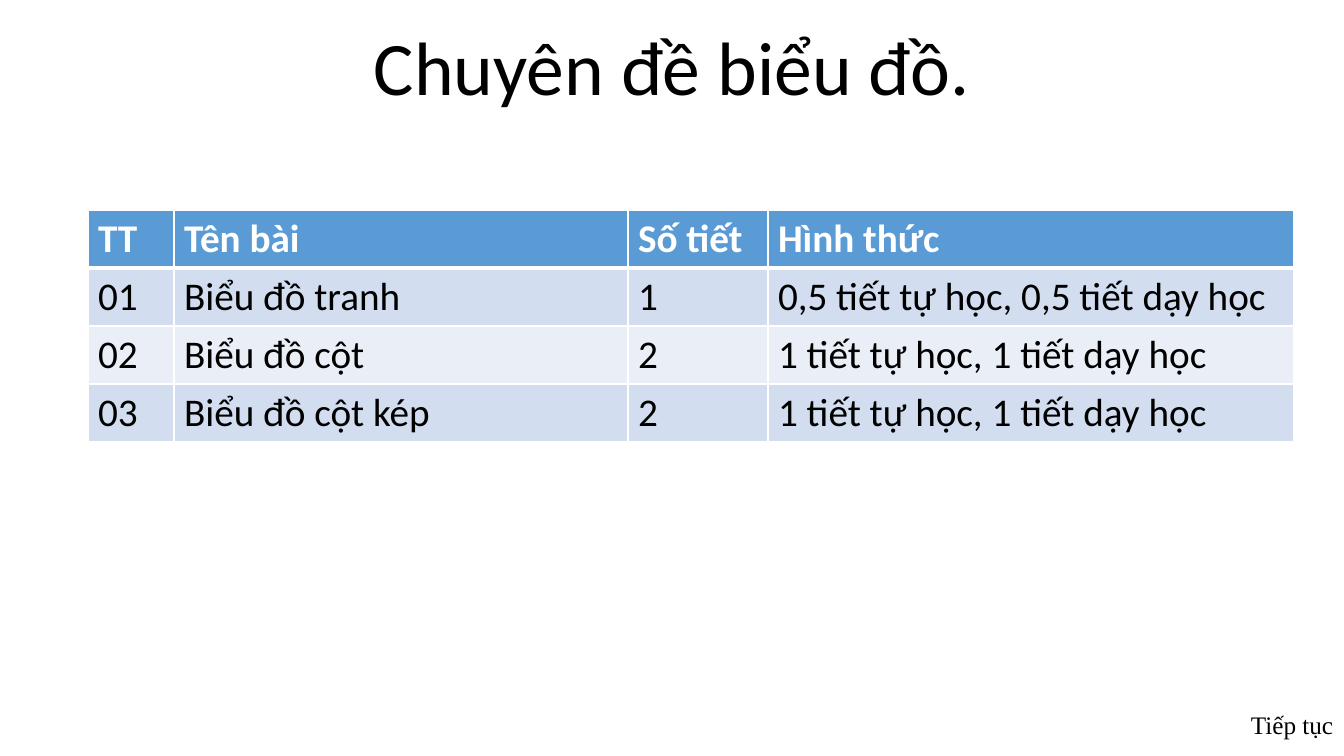
from lxml import etree
from pptx import Presentation
from pptx.dml.color import RGBColor
from pptx.enum.text import MSO_ANCHOR, MSO_AUTO_SIZE, PP_ALIGN
from pptx.oxml.ns import qn
from pptx.util import Emu, Pt

CENTER, LEFT = PP_ALIGN.CENTER, PP_ALIGN.LEFT
BOTTOM, NO_FIT = MSO_ANCHOR.BOTTOM, MSO_AUTO_SIZE.NONE
EMU_PER_PX = 914400 / 100.8

COLORS = {
    "text": "000000",
    "white": "FFFFFF",
    "header": "5B9BD5",
    "band_dark": "D2DEEF",
    "band_light": "EAEFF7",
}
COLUMN_WIDTHS = [86, 454, 140, 526]
ROW_HEIGHT = 58
LESSONS = [
    ["TT", "Tên bài", "Số tiết", "Hình thức"],
    ["01", "Biểu đồ tranh", "1", "0,5 tiết tự học, 0,5 tiết dạy học"],
    ["02", "Biểu đồ cột", "2", "1 tiết tự học, 1 tiết dạy học"],
    ["03", "Biểu đồ cột kép", "2", "1 tiết tự học, 1 tiết dạy học"],
]


def px(n):
    return Emu(round(n * EMU_PER_PX))


def rgb(name):
    return RGBColor.from_string(COLORS[name])


def write(tf, text, size, color="text", font="Calibri", bold=False, align=LEFT):
    p = tf.paragraphs[0]
    p.text = text
    p.alignment = align
    p.font.name = font
    p.font.size = Pt(size)
    p.font.bold = bold
    p.font.color.rgb = rgb(color)
    return p


def set_title(slide, text, x, y, w, h):
    sp = slide.shapes.title
    sp.left, sp.top, sp.width, sp.height = map(px, (x, y, w, h))
    tf = sp.text_frame
    tf.vertical_anchor = BOTTOM
    tf.auto_size = NO_FIT
    write(tf, text, 54, align=CENTER).line_spacing = 0.9


def set_borders(cell, bottom_width):
    tc_pr = cell._tc.get_or_add_tcPr()
    widths = {"a:lnL": 1, "a:lnR": 1, "a:lnT": 1, "a:lnB": bottom_width}
    # Border lines come before the fill in the cell properties
    for i, (tag, width) in enumerate(widths.items()):
        ln = etree.Element(qn(tag), w=str(Pt(width)))
        fill = etree.SubElement(ln, qn("a:solidFill"))
        etree.SubElement(fill, qn("a:srgbClr"), val=COLORS["white"])
        tc_pr.insert(i, ln)


def add_lesson_table(slide, x, y):
    table = slide.shapes.add_table(
        len(LESSONS), len(COLUMN_WIDTHS), px(x), px(y),
        px(sum(COLUMN_WIDTHS)), px(ROW_HEIGHT * len(LESSONS))).table
    for column, width in zip(table.columns, COLUMN_WIDTHS):
        column.width = px(width)
    for r, row in enumerate(LESSONS):
        header = r == 0
        band = "header" if header else "band_dark" if r % 2 else "band_light"
        for c, text in enumerate(row):
            cell = table.cell(r, c)
            cell.fill.solid()
            cell.fill.fore_color.rgb = rgb(band)
            set_borders(cell, 3 if header else 1)
            if r == 1:
                cell._tc.tcPr.find(qn("a:lnT")).set("w", str(Pt(3)))
            write(cell.text_frame, text, 28, "white" if header else "text", bold=header)


def add_label(slide, text, x, y, w, h):
    tf = slide.shapes.add_textbox(px(x), px(y), px(w), px(h)).text_frame
    tf.word_wrap = False
    write(tf, text, 18, font="Times New Roman")


def main():
    prs = Presentation()
    prs.slide_width, prs.slide_height = px(1344), px(756)
    slide = prs.slides.add_slide(prs.slide_layouts[0])

    # Title, without the subtitle
    subtitle = slide.placeholders[1].element
    subtitle.getparent().remove(subtitle)
    set_title(slide, "Chuyên đề biểu đồ.", 168, 17, 1008, 100)

    # Lesson table
    add_lesson_table(slide, 88, 210)

    # Continue label in the corner
    add_label(slide, "Tiếp tục", 1241, 704, 104, 40)

    prs.save("out.pptx")


if __name__ == "__main__":
    main()
